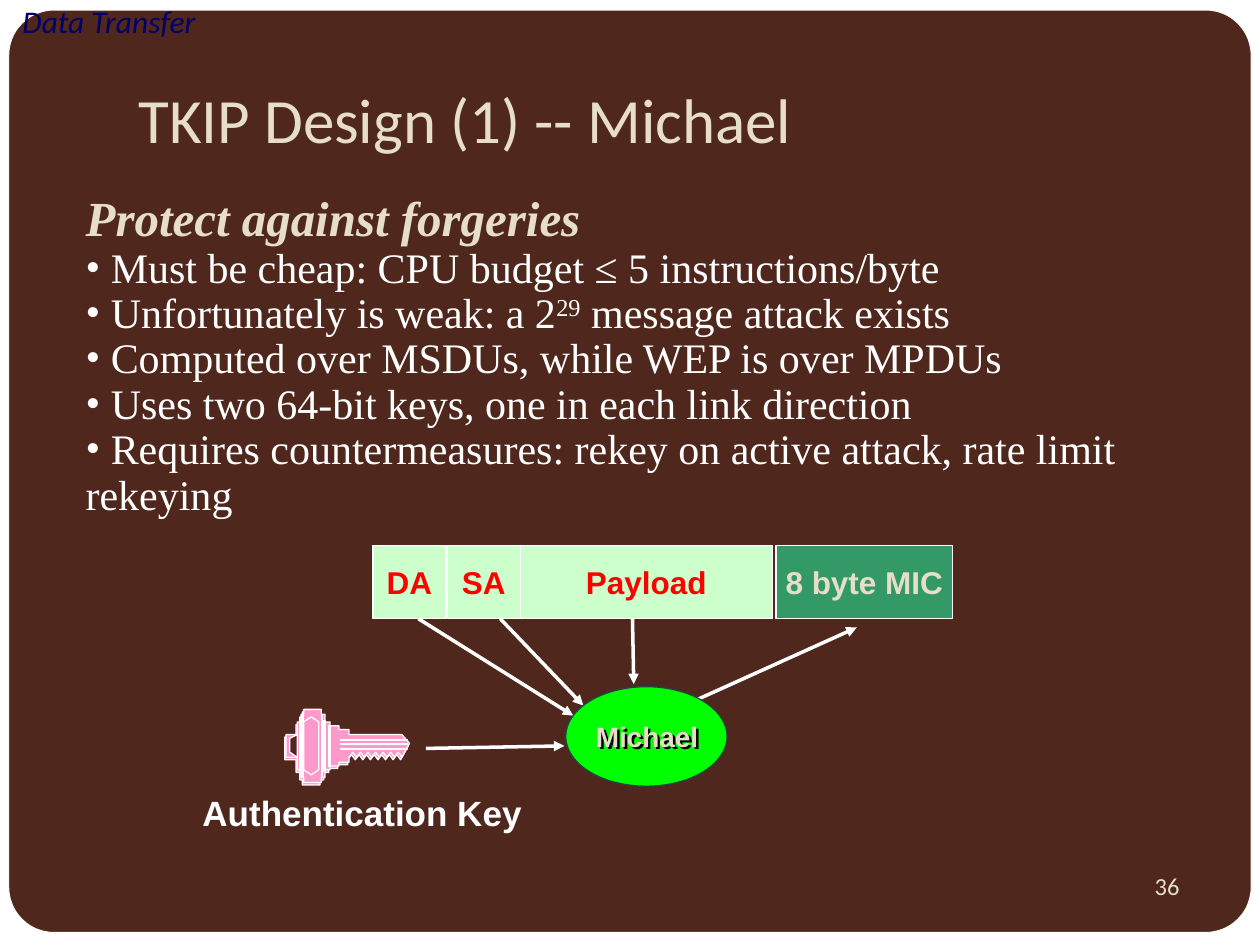
"""Build the TKIP Michael slide on a grid of 1000 columns by 750 rows."""
from lxml.etree import SubElement
from pptx import Presentation
from pptx.dml.color import RGBColor
from pptx.enum.shapes import MSO_CONNECTOR as Link, MSO_SHAPE as Preset
from pptx.enum.text import MSO_ANCHOR as Anchor, PP_ALIGN as Align
from pptx.oxml.ns import qn
from pptx.util import Inches, Pt

WHITE = RGBColor(0xFF, 0xFF, 0xFF)
BROWN = RGBColor(0x4F, 0x27, 0x1C)
CREAM = RGBColor(0xE7, 0xDE, 0xC9)
MINT = RGBColor(0xCC, 0xFF, 0xCC)
RED = RGBColor(0xFF, 0x00, 0x00)
TEAL = RGBColor(0x33, 0x99, 0x66)
LIME = RGBColor(0x00, 0xFF, 0x00)
SLATE = RGBColor(0x22, 0x45, 0x44)
PINK = RGBColor(0xFF, 0x99, 0xCC)
NAVY = RGBColor(0x00, 0x00, 0x66)

deck = Presentation()
deck.slide_width, deck.slide_height = Inches(10), Inches(7.5)
CELL = deck.slide_width // 1000
slide = deck.slides.add_slide(deck.slide_layouts[6])
shapes = slide.shapes
slide.background.fill.solid()
slide.background.fill.fore_color.rgb = WHITE

SERIF = {"name": "Times New Roman", "size": Pt(24)}
SANS = {"name": "Calibri"}
STRONG = {"name": "Arial", "bold": True}
TIGHT = {"margin_left": CELL * 8, "margin_right": CELL * 8,
         "margin_top": CELL * 4, "margin_bottom": CELL * 4}


def paint(shape, fill, line=WHITE, width=0.75):
    shape.shadow.inherit = False
    shape.fill.solid()
    shape.fill.fore_color.rgb = fill
    shape.line.color.rgb = line
    shape.line.width = Pt(width)
    return shape


def write(paragraph, text, color, **font):
    run = paragraph.add_run()
    run.text = text
    run.font.color.rgb = color
    for key, value in font.items():
        setattr(run.font, key, value)
    return run


panel_area = (CELL * n for n in (7, 8, 986, 732))
panel = paint(shapes.add_shape(Preset.ROUNDED_RECTANGLE, *panel_area), BROWN, width=0.5)
panel.adjustments[0] = 0.049

body = shapes.add_textbox(*(CELL * n for n in (60, 200, 881, 216))).text_frame
for key, value in (TIGHT | {"word_wrap": True, "vertical_anchor": Anchor.BOTTOM}).items():
    setattr(body, key, value)
heading = body.paragraphs[0]
heading.line_spacing = 0.9
write(heading, "Protect against forgeries", CREAM, **SERIF | {"size": Pt(28), "bold": True, "italic": True})
points = [
    ["Must be cheap: CPU budget ≤ 5 instructions/byte"],
    ["Unfortunately is weak: a 2", "29", " message attack exists"],
    ["Computed over MSDUs, while WEP is over MPDUs"],
    ["Uses two 64-bit keys, one in each link direction"],
    ["Requires countermeasures: rekey on active attack, rate limit rekeying"],
]
for lead, *rest in points:
    point = body.add_paragraph()
    point.line_spacing = 0.9
    bullet = point._p.get_or_add_pPr()
    SubElement(bullet, qn("a:buFont"), typeface="Times New Roman")
    SubElement(bullet, qn("a:buChar"), char="•")
    write(point, " " + lead, WHITE, **SERIF)
    for text in rest:
        run = write(point, text, WHITE, **SERIF)
        if text.isdigit():
            run.font._element.set("baseline", "30000")

FRAME_TOP, FRAME_HEIGHT = 433, 58
FRAME_BOTTOM = FRAME_TOP + FRAME_HEIGHT
frame_fields = [
    ("DA", 296, 58, MINT, RED),
    ("SA", 355, 58, MINT, RED),
    ("Payload", 413, 200, MINT, RED),
    ("8 byte MIC", 616, 140, TEAL, CREAM),
]
for name, left, width, fill, ink in frame_fields:
    area = (CELL * n for n in (left, FRAME_TOP, width, FRAME_HEIGHT))
    field = paint(shapes.add_shape(Preset.RECTANGLE, *area), fill)
    for key, value in (TIGHT | {"word_wrap": False, "vertical_anchor": Anchor.MIDDLE}).items():
        setattr(field.text_frame, key, value)
    label = field.text_frame.paragraphs[0]
    label.alignment = Align.CENTER
    write(label, name, ink, size=Pt(18), **STRONG)

flows = {
    "Michael to MIC": (525, 568, 680, 498),
    "Payload to Michael": (502, FRAME_BOTTOM, 503, 543),
    "SA to Michael": (397, FRAME_BOTTOM, 463, 560),
    "DA to Michael": (332, FRAME_BOTTOM, 455, 568),
    "key to Michael": (338, 594, 448, 592),
}
for ends in flows.values():
    flow = shapes.add_connector(Link.STRAIGHT, *(CELL * n for n in ends))
    flow.line.color.rgb = WHITE
    flow.line.width = Pt(2)
    SubElement(flow.line._get_or_add_ln(), qn("a:tailEnd"), type="triangle")
    SubElement(flow._element.spPr, qn("a:effectLst"))

paint(shapes.add_shape(Preset.OVAL, *(CELL * n for n in (449, 545, 128, 79))), LIME, SLATE)

KEY_AXIS = 594
BOW_LEFT, BOW_MIDDLE, BLADE_LEFT, BLADE_RIGHT = 226, 247, 276, 318
BLADE_HALF, TOOTH_PITCH, TOOTH_DEPTH = 9, 6, 4
bow_steps = [(235, 9), (238, 19), (240, 25), (254, 29), (257, 25), (261, 19), (268, 16), (BLADE_LEFT, 13)]

bow_top, step_left = [], BOW_LEFT
for step_right, half in bow_steps:
    bow_top += [(step_left, KEY_AXIS - half), (step_right, KEY_AXIS - half)]
    step_left = step_right
bow_bottom = [(x, 2 * KEY_AXIS - y) for x, y in reversed(bow_top)]
blade_top, blade_bottom = KEY_AXIS - BLADE_HALF, KEY_AXIS + BLADE_HALF
blade = [(BLADE_LEFT, blade_top), (BLADE_RIGHT, blade_top), (BLADE_RIGHT + TOOTH_PITCH, KEY_AXIS - 2)]
for tooth in range(BLADE_RIGHT, BLADE_LEFT, -TOOTH_PITCH):
    blade += [(tooth, blade_bottom), (tooth - TOOTH_PITCH // 2, blade_bottom - TOOTH_DEPTH)]
blade.append((BLADE_LEFT, blade_bottom))

key_body = bow_top + blade + bow_bottom
key_hole = [(229, KEY_AXIS - 6), (235, KEY_AXIS - 9), (235, KEY_AXIS + 9), (229, KEY_AXIS + 5)]
grip = [(BOW_MIDDLE + side * 6, KEY_AXIS - 2 + drop)
        for side, drop in [(0, -23), (1, -19), (1, 19), (0, 23), (-1, 19), (-1, -19)]]
key_layers = [(key_body, PINK, 0), (key_body, PINK, 1), (key_hole, BROWN, 1), (grip, PINK, 0)]
for corners, fill, lift in key_layers:
    raised = [(x + lift, y - 2 * lift) for x, y in corners]
    outline = shapes.build_freeform(*raised[0], scale=CELL)
    outline.add_line_segments(raised[1:], close=True)
    paint(outline.convert_to_shape(), fill)

bow_ridges = [(x, KEY_AXIS - 2 - half, 1, 2 * half) for x, half in [(238, 20), (240, 25), (255, 25), (257, 20), (261, 16)]]
blade_grooves = [(270, y, 53, 1) for y in (587, 590, KEY_AXIS)]
for area in bow_ridges + blade_grooves:
    paint(shapes.add_shape(Preset.RECTANGLE, *(CELL * n for n in area)), PINK)

captions = [
    ("TKIP Design (1) -- Michael", (100, 58, 847, 71), CREAM, Align.LEFT, Anchor.BOTTOM, 36, SANS),
    ("Michael", (456, 566, 115, 37), CREAM, Align.CENTER, Anchor.TOP, 16, STRONG),
    ("Authentication Key", (144, 623, 287, 43), WHITE, Align.CENTER, Anchor.TOP, 20, STRONG),
    ("Data Transfer", (8, -25, 350, 83), NAVY, Align.LEFT, Anchor.MIDDLE, 18, SANS | {"italic": True}),
    ("36", (675, 677, 271, 52), CREAM, Align.RIGHT, Anchor.MIDDLE, 14, SANS),
]
for text, area, ink, align, anchor, size, font in captions:
    caption = shapes.add_textbox(*(CELL * n for n in area))
    for key, value in {"word_wrap": True, "vertical_anchor": anchor}.items():
        setattr(caption.text_frame, key, value)
    line = caption.text_frame.paragraphs[0]
    line.alignment = align
    write(line, text, ink, size=Pt(size), **font)
    if text == "Michael":
        effects = SubElement(caption._element.spPr, qn("a:effectLst"))
        shade = SubElement(effects, qn("a:outerShdw"), dist=str(Pt(2)), dir="2700000")
        SubElement(shade, qn("a:srgbClr"), val="000000")

deck.save("out.pptx")
